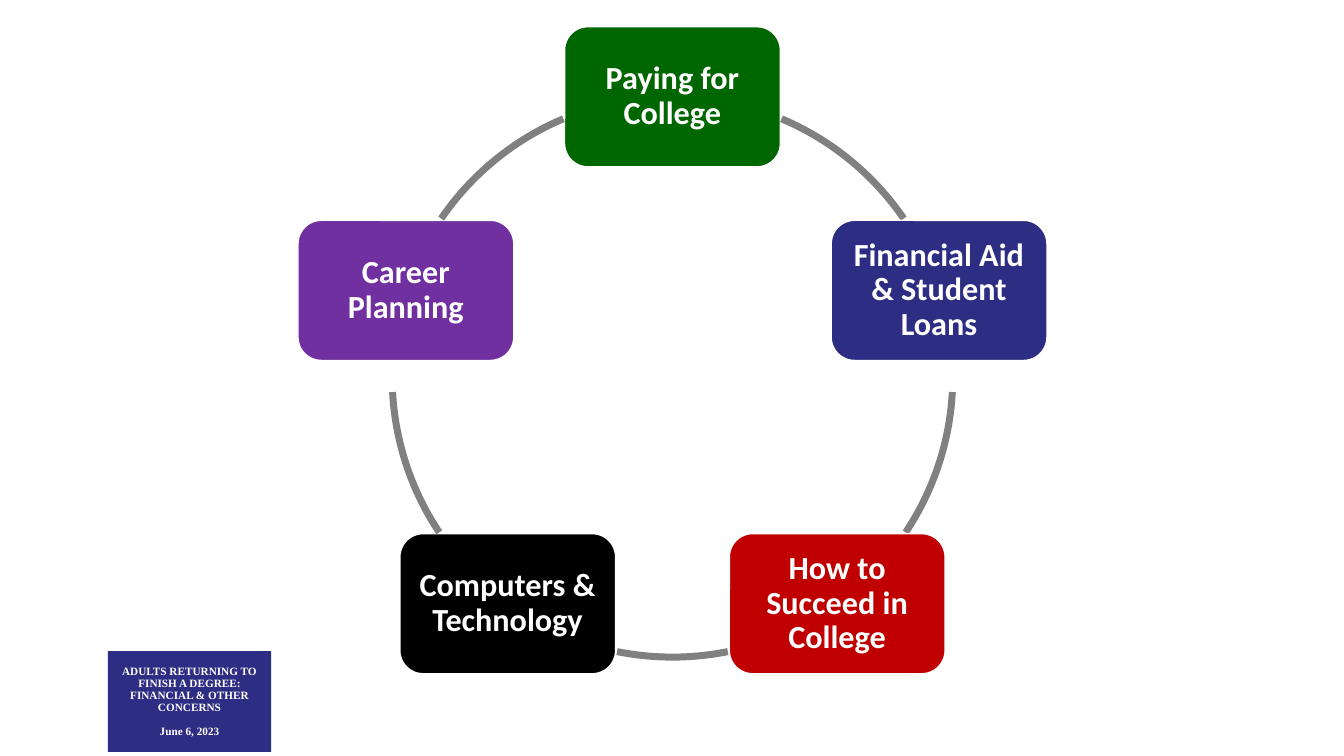
from dataclasses import dataclass
from math import cos, radians, sin

from pptx import Presentation
from pptx.dml.color import RGBColor
from pptx.enum.shapes import MSO_SHAPE
from pptx.enum.text import MSO_ANCHOR, PP_ALIGN
from pptx.util import Inches, Pt


@dataclass(frozen=True)
class Theme:
    white: str = "FFFFFF"
    navy: str = "2D2D83"
    green: str = "006600"
    red: str = "C00000"
    black: str = "000000"
    purple: str = "7030A0"
    ring: str = "808080"
    topic_font: str = "Calibri"
    footer_font: str = "Times New Roman"
    topic_size: float = 23
    footer_size: float = 8
    ring_width: float = 5
    card_line_width: float = 1


THEME = Theme()
CARD_WIDTH, CARD_HEIGHT = 2.14, 1.39

# Topic, card colour, and the arc to the next card in degrees clockwise from the top
TOPICS = [
    ("Paying for College", THEME.green, (22.9, 55.6)),
    ("Financial Aid & Student Loans", THEME.navy, (93.1, 123.7)),
    ("How to Succeed in College", THEME.red, (168.6, 191.4)),
    ("Computers & Technology", THEME.black, (236.3, 266.9)),
    ("Career Planning", THEME.purple, (304.4, 337.1)),
]


def add_box(slide, kind, left, top, width, height, fill=None, line=None, line_width=1):
    shape = slide.shapes.add_shape(
        kind, Inches(left), Inches(top), Inches(width), Inches(height))
    shape.shadow.inherit = False
    if fill:
        shape.fill.solid()
        shape.fill.fore_color.rgb = RGBColor.from_string(fill)
    else:
        shape.fill.background()
    if line:
        shape.line.color.rgb = RGBColor.from_string(line)
        shape.line.width = Pt(line_width)
    else:
        shape.line.fill.background()
    return shape


def write_text(shape, *lines, font, size, color, inset_y=0.05, gap=0):
    """Write one bold centred paragraph per line, with gap points between them."""
    frame = shape.text_frame
    frame.word_wrap = True
    frame.vertical_anchor = MSO_ANCHOR.MIDDLE
    frame.margin_left = frame.margin_right = Inches(0.1)
    frame.margin_top = frame.margin_bottom = Inches(inset_y)
    for index, line in enumerate(lines):
        paragraph = frame.add_paragraph() if index else frame.paragraphs[0]
        paragraph.alignment = PP_ALIGN.CENTER
        paragraph.line_spacing = 0.9
        if index:
            paragraph.space_before = Pt(gap)
        run = paragraph.add_run()
        run.text = line
        run.font.name = font
        run.font.size = Pt(size)
        run.font.bold = True
        run.font.color.rgb = RGBColor.from_string(color)


def add_footer(slide, left, top, width, height):
    footer = add_box(slide, MSO_SHAPE.RECTANGLE, left, top, width, height, fill=THEME.navy)
    write_text(footer, "ADULTS RETURNING TO FINISH A DEGREE: FINANCIAL & OTHER CONCERNS",
               "June 6, 2023", font=THEME.footer_font, size=THEME.footer_size,
               color=THEME.white, gap=8.5)


def add_topic_cycle(slide, left, top, diameter):
    """Spread the topic cards evenly round a circle and join them with arcs."""
    radius = diameter / 2
    for index, (topic, color, arc_angles) in enumerate(TOPICS):
        angle = radians(index * 360 / len(TOPICS))
        center_x = left + radius + radius * sin(angle)
        center_y = top + radius - radius * cos(angle)
        card = add_box(slide, MSO_SHAPE.ROUNDED_RECTANGLE,
                       center_x - CARD_WIDTH / 2, center_y - CARD_HEIGHT / 2,
                       CARD_WIDTH, CARD_HEIGHT, fill=color,
                       line=THEME.white, line_width=THEME.card_line_width)
        write_text(card, topic, font=THEME.topic_font, size=THEME.topic_size,
                   color=THEME.white, inset_y=0.1)

        arc = add_box(slide, MSO_SHAPE.ARC, left, top, diameter, diameter,
                      line=THEME.ring, line_width=THEME.ring_width)
        for position, degrees in enumerate(arc_angles):
            # Arc angles run from three o'clock; one degree is 0.6 adjustment units
            arc.adjustments[position] = (degrees - 90) % 360 * 0.6


def main():
    presentation = Presentation()
    presentation.slide_width = Inches(13.33)
    presentation.slide_height = Inches(7.5)
    slide = presentation.slides.add_slide(presentation.slide_layouts[6])
    add_footer(slide, 1.07, 6.46, 1.62, 1)
    add_topic_cycle(slide, 3.89, 0.96, 5.56)
    presentation.save("out.pptx")


if __name__ == "__main__":
    main()
